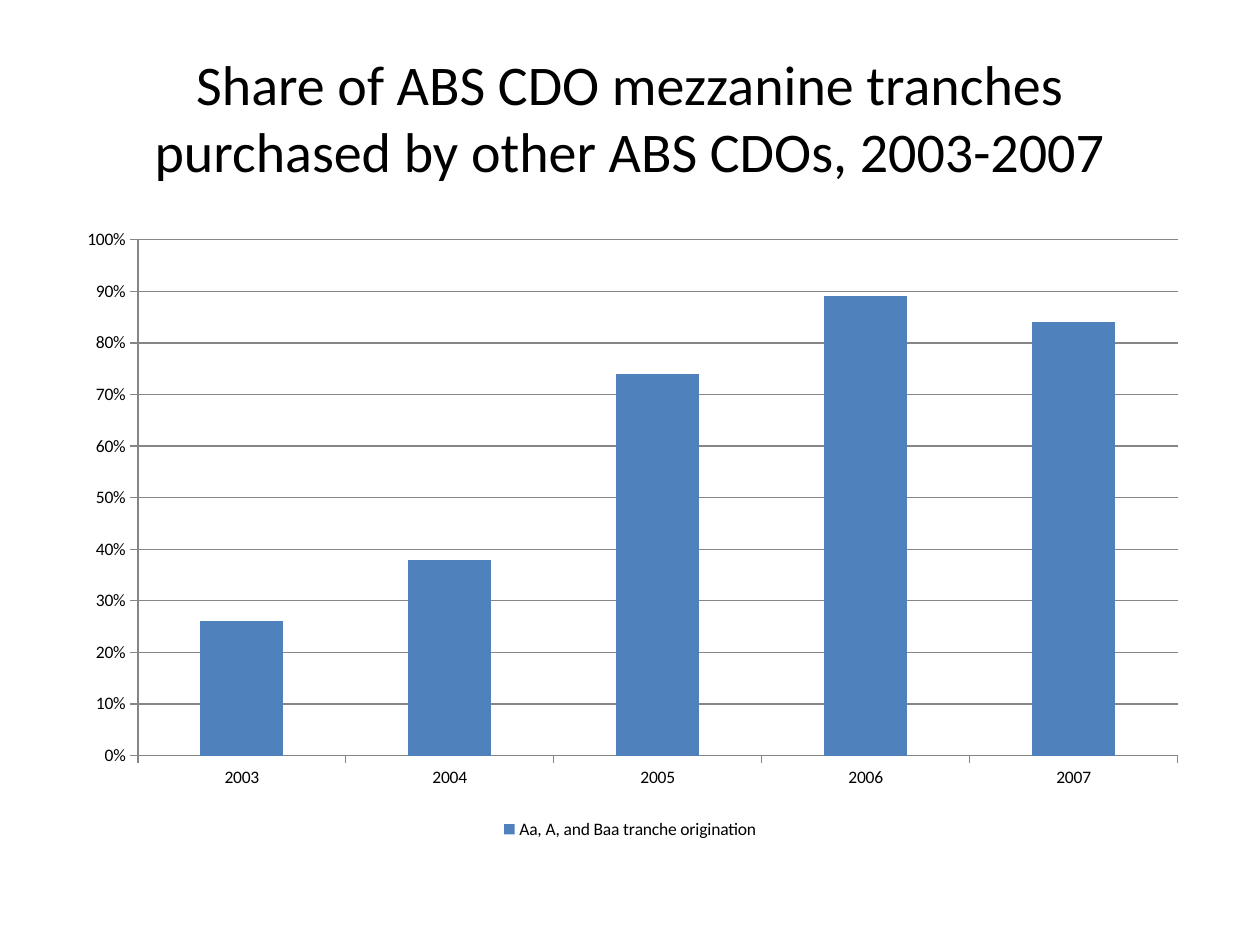
from typing import NamedTuple

from lxml import etree
from pptx import Presentation
from pptx import util as u
from pptx.chart.data import CategoryChartData
from pptx.dml.color import RGBColor
from pptx.enum import chart as charts, text

COLORS = {"ink": "000000", "bars": "4F81BD", "rules": "868686"}
FONT = "Calibri"


class Box(NamedTuple):
    left: float
    top: float
    width: float
    height: float


class YearShare(NamedTuple):
    year: str
    share: float


SHARES = [
    YearShare("2003", 0.26),
    YearShare("2004", 0.38),
    YearShare("2005", 0.74),
    YearShare("2006", 0.89),
    YearShare("2007", 0.84),
]


def rgb(name: str) -> RGBColor:
    return RGBColor.from_string(COLORS[name])


def inches(box: Box) -> list[u.Length]:
    return [u.Inches(length) for length in box]


def style_font(font, size: float, color: str) -> None:
    font.name = FONT
    font.size = u.Pt(size)
    font.color.rgb = rgb(color)


def add_text(slide, wording: str, box: Box, *, size: float, color: str = "ink",
             align=text.PP_ALIGN.CENTER, anchor=text.MSO_ANCHOR.MIDDLE) -> None:
    frame = slide.shapes.add_textbox(*inches(box)).text_frame
    frame.word_wrap = True
    frame.vertical_anchor = anchor
    paragraph = frame.paragraphs[0]
    paragraph.alignment = align
    run = paragraph.add_run()
    run.text = wording
    style_font(run.font, size, color)


def style_line(line) -> None:
    line.color.rgb = rgb("rules")
    line.width = u.Pt(0.75)


def place_plot(chart, area: Box) -> None:
    plot_area = chart.element.xpath("c:chart/c:plotArea")[0]
    for old_layout in plot_area.xpath("c:layout"):
        plot_area.remove(old_layout)
    namespace = plot_area.nsmap["c"]
    layout = etree.Element(f"{{{namespace}}}layout")
    manual = etree.SubElement(layout, f"{{{namespace}}}manualLayout")
    settings = {"layoutTarget": "inner", "xMode": "edge", "yMode": "edge",
                "x": area.left, "y": area.top, "w": area.width, "h": area.height}
    for tag, value in settings.items():
        etree.SubElement(manual, f"{{{namespace}}}{tag}", val=str(value))
    plot_area.insert(0, layout)


def add_share_chart(slide, shares: list[YearShare], box: Box) -> None:
    data = CategoryChartData(number_format="0%")
    data.categories = [entry.year for entry in shares]
    data.add_series("Aa, A, and Baa tranche origination",
                    [entry.share for entry in shares])
    chart = slide.shapes.add_chart(
        charts.XL_CHART_TYPE.COLUMN_CLUSTERED, *inches(box), data).chart
    style_font(chart.font, 10, "ink")
    chart.has_title = False
    chart.has_legend = True
    chart.legend.position = charts.XL_LEGEND_POSITION.BOTTOM
    chart.legend.include_in_layout = False

    columns = chart.plots[0]
    columns.gap_width = 150
    columns.vary_by_categories = False
    origination = columns.series[0]
    origination.format.fill.solid()
    origination.format.fill.fore_color.rgb = rgb("bars")

    years, percent = chart.category_axis, chart.value_axis
    for axis in (years, percent):
        axis.major_tick_mark = charts.XL_TICK_MARK.OUTSIDE
        axis.minor_tick_mark = charts.XL_TICK_MARK.NONE
        style_line(axis.format.line)
    percent.minimum_scale = 0
    percent.maximum_scale = 1
    percent.major_unit = 0.1
    percent.tick_labels.number_format = "0%"
    percent.tick_labels.number_format_is_linked = False
    percent.has_major_gridlines = True
    style_line(percent.major_gridlines.format.line)
    place_plot(chart, Box(0.066, 0.031, 0.917, 0.827))


def main() -> None:
    deck = Presentation()
    deck.slide_width, deck.slide_height = u.Inches(10), u.Inches(7.5)
    slide = deck.slides.add_slide(deck.slide_layouts[6])
    add_text(slide,
             "Share of ABS CDO mezzanine tranches purchased by other ABS CDOs, 2003-2007",
             Box(0.5, 0.3, 9, 1.25), size=32)
    add_share_chart(slide, SHARES, Box(0.5, 1.75, 9, 4.95))
    deck.save("out.pptx")


if __name__ == "__main__":
    main()
